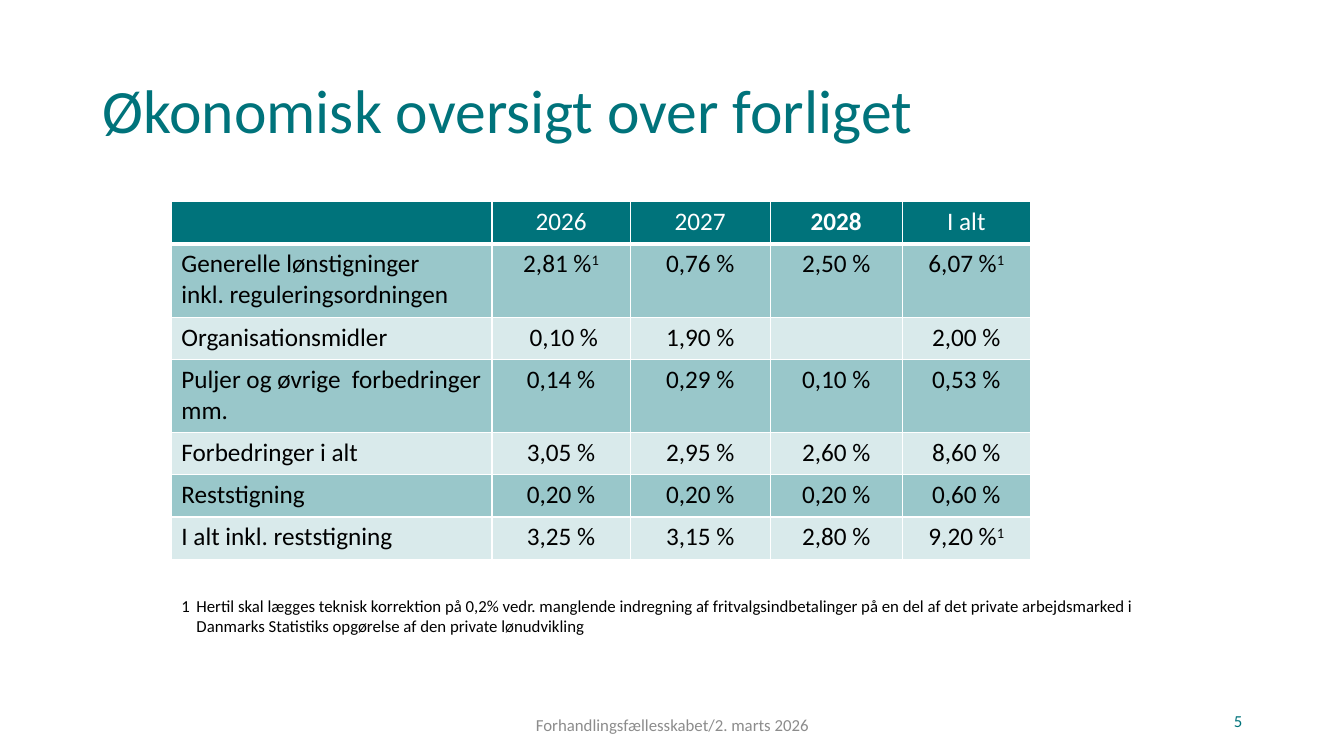
from lxml import etree
from pptx import Presentation
from pptx.dml.color import RGBColor
from pptx.enum import text as t
from pptx.oxml import ns
from pptx.util import Inches, Pt

TEAL = RGBColor(0x00, 0x73, 0x7B)
WHITE = RGBColor(0xFF, 0xFF, 0xFF)
BLACK = RGBColor(0x00, 0x00, 0x00)
GREY = RGBColor(0x8C, 0x8C, 0x8C)
LEFT, CENTER, RIGHT = t.PP_ALIGN.LEFT, t.PP_ALIGN.CENTER, t.PP_ALIGN.RIGHT
TOP, MIDDLE = t.MSO_ANCHOR.TOP, t.MSO_ANCHOR.MIDDLE

prs = Presentation()
prs.slide_width, prs.slide_height = Inches(13.33), Inches(7.5)
slide = prs.slides.add_slide(prs.slide_layouts[6])


def add_run(paragraph, words, **font_values):
    run = paragraph.add_run()
    run.text = words
    run.font.name = "Calibri"
    run.font.color.rgb = font_values.pop("color")
    for key, value in font_values.items():
        setattr(run.font, key, value)
    return run


def add_words(place, words, size, color, align, anchor):
    frame = slide.shapes.add_textbox(*map(Inches, place)).text_frame
    frame.word_wrap = True
    frame.vertical_anchor = anchor
    paragraph = frame.paragraphs[0]
    paragraph.alignment = align
    add_run(paragraph, words, size=Pt(size), color=color)
    return paragraph


title = add_words((0.92, 0.4, 11.5, 1.45), "Økonomisk oversigt over forliget", 44, TEAL, LEFT, MIDDLE)
title.line_spacing = 0.9
add_words((9.42, 6.95, 3, 0.4), "5", 12, TEAL, RIGHT, MIDDLE)

overview = [
    ["", "2026", "2027", "2028", "I alt"],
    ["Generelle lønstigninger\ninkl. reguleringsordningen", "2,81 %^1", "0,76 %", "2,50 %", "6,07 %^1"],
    ["Organisationsmidler", " 0,10 %", "1,90 %", "", "2,00 %"],
    ["Puljer og øvrige  forbedringer mm.", "0,14 %", "0,29 %", "0,10 %", "0,53 %"],
    ["Forbedringer i alt", "3,05 %", "2,95 %", "2,60 %", "8,60 %"],
    ["Reststigning", "0,20 %", "0,20 %", "0,20 %", "0,60 %"],
    ["I alt inkl. reststigning", "3,25 %", "3,15 %", "2,80 %", "9,20 %^1"],
]
widths = [3.18, 1.37, 1.39, 1.31, 1.27]
heights = [0.42, 0.73, 0.42, 0.72, 0.42, 0.42, 0.42]

table = slide.shapes.add_table(
    len(heights), len(widths), Inches(1.7), Inches(2), Inches(sum(widths)), Inches(sum(heights))
).table
for column, width in zip(table.columns, widths):
    column.width = Inches(width)

for row_index, (entries, height) in enumerate(zip(overview, heights)):
    table.rows[row_index].height = Inches(height)
    is_header = row_index == 0
    for column_index, entry in enumerate(entries):
        cell = table.cell(row_index, column_index)
        cell.fill.solid()
        cell.fill.fore_color.rgb = TEAL
        properties = cell._tc.get_or_add_tcPr()
        if not is_header:
            tint = properties.find(".//" + ns.qn("a:srgbClr"))
            opacity = 40 if row_index % 2 else 15
            etree.SubElement(tint, ns.qn("a:alpha"), val=str(opacity * 1000))
        for position, edge in enumerate(("lnL", "lnR", "lnT", "lnB")):
            points = 3 if is_header and edge == "lnB" else 1
            border = etree.Element(ns.qn("a:" + edge), w=str(Pt(points)))
            border_fill = etree.SubElement(border, ns.qn("a:solidFill"))
            etree.SubElement(border_fill, ns.qn("a:srgbClr"), val=str(WHITE))
            properties.insert(position, border)

        for line_index, line in enumerate(entry.split("\n")):
            frame = cell.text_frame
            paragraph = frame.add_paragraph() if line_index else frame.paragraphs[0]
            paragraph.alignment = CENTER if column_index else LEFT
            value, _, note_mark = line.partition("^")
            style = {"size": Pt(18), "bold": entry == "2028", "color": WHITE if is_header else BLACK}
            if value:
                add_run(paragraph, value, **style)
            if note_mark:
                mark = add_run(paragraph, note_mark, **style)
                mark._r.get_or_add_rPr().set("baseline", "30000")

add_words((4.42, 6.99, 4.5, 0.4), "Forhandlingsfællesskabet/2. marts 2026", 12, GREY, CENTER, MIDDLE)
footnote = add_words(
    (1.7, 5.86, 9.69, 0.77),
    "Hertil skal lægges teknisk korrektion på 0,2% vedr. manglende indregning af fritvalgsindbetalinger "
    "på en del af det private arbejdsmarked i Danmarks Statistiks opgørelse af den private lønudvikling",
    12, BLACK, LEFT, TOP,
)
numbering = footnote._p.get_or_add_pPr()
numbering.set("marL", str(Inches(0.15)))
numbering.set("indent", str(Inches(-0.15)))
etree.SubElement(numbering, ns.qn("a:buAutoNum"), type="arabicPlain")

prs.save("out.pptx")
